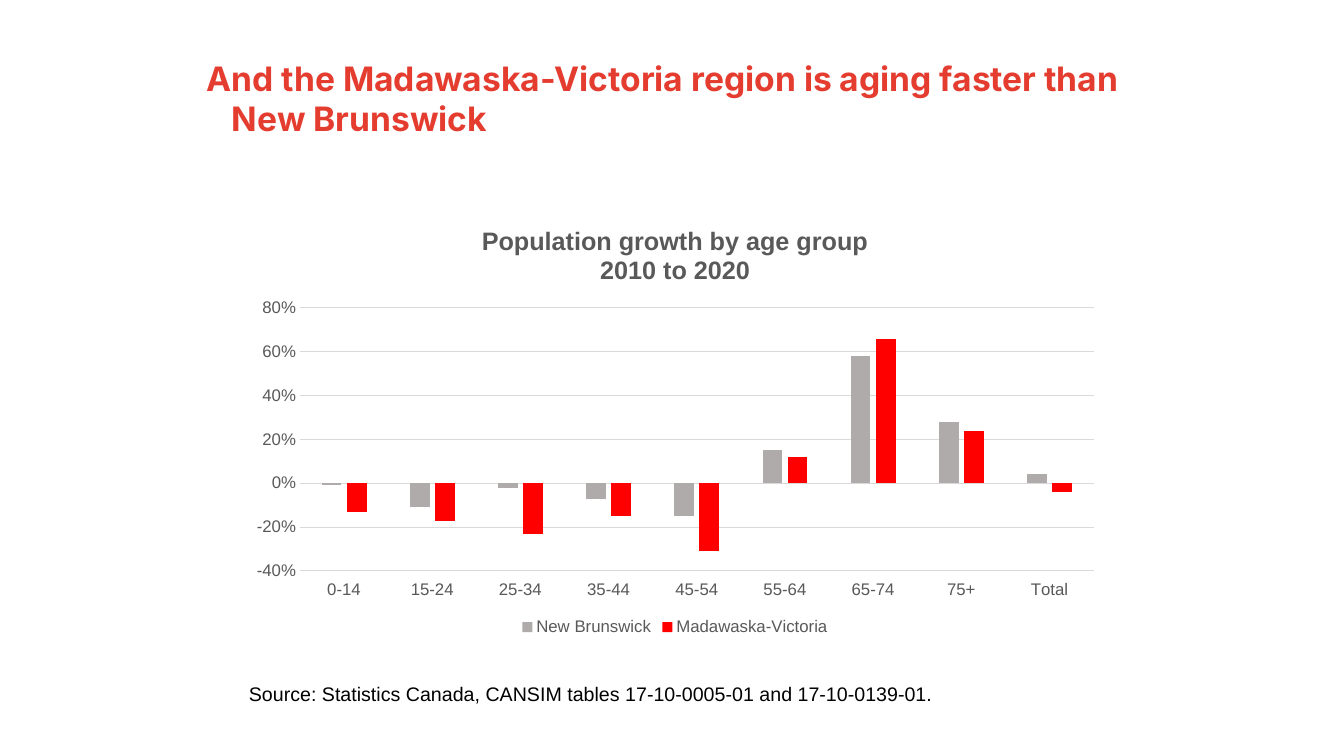
"""Build the slide comparing population growth by age group."""
from lxml import etree
from pptx import Presentation
from pptx.chart.data import CategoryChartData
from pptx.dml.color import RGBColor
from pptx.enum import chart as charts, text
from pptx.oxml import ns
from pptx.util import Inches, Pt

HEADING = "And the Madawaska-Victoria region is aging faster than New Brunswick"
SOURCE = "Source: Statistics Canada, CANSIM tables 17-10-0005-01 and 17-10-0139-01."
CHART_TITLE = "Population growth by age group\n2010 to 2020"
AGE_GROUPS = ["0-14", "15-24", "25-34", "35-44", "45-54", "55-64", "65-74", "75+", "Total"]
GROWTH = [
    ("New Brunswick", "AFABAB", [-0.01, -0.11, -0.02, -0.07, -0.15, 0.15, 0.58, 0.28, 0.04]),
    ("Madawaska-Victoria", "FF0000", [-0.13, -0.17, -0.23, -0.15, -0.31, 0.12, 0.66, 0.24, -0.04]),
]
PLOT_AREA = {"x": 0.07, "y": 0.23, "w": 0.91, "h": 0.61}
RED, GREY, PALE = "E43D30", "595959", "D9D9D9"


def color(value):
    return RGBColor.from_string(value)


def style(font, size, shade, name="Arial", bold=False):
    font.size, font.name, font.bold = Pt(size), name, bold
    font.color.rgb = color(shade)


def outline(line):
    line.color.rgb = color(PALE)
    line.width = Pt(0.75)


def place_plot(chart):
    plot_area = chart.element.find(".//" + ns.qn("c:plotArea"))
    layout = plot_area.find(ns.qn("c:layout"))
    if layout is None:
        layout = etree.Element(ns.qn("c:layout"))
        plot_area.insert(0, layout)
    manual = etree.SubElement(layout, ns.qn("c:manualLayout"))
    settings = {"layoutTarget": "inner", "xMode": "edge", "yMode": "edge", **PLOT_AREA}
    for tag, value in settings.items():
        etree.SubElement(manual, ns.qn("c:" + tag)).set("val", str(value))


def add_heading(page):
    title = page.shapes.title
    title.left, title.top = Inches(1.7), Inches(0.52)
    title.width, title.height = Inches(9.71), Inches(1.55)
    frame = title.text_frame
    frame.text = HEADING
    frame.word_wrap = True
    frame.auto_size = text.MSO_AUTO_SIZE.NONE
    frame.vertical_anchor = text.MSO_ANCHOR.TOP
    para = frame.paragraphs[0]
    para.alignment = text.PP_ALIGN.LEFT
    properties = para._p.get_or_add_pPr()
    properties.set("marL", str(Inches(0.5)))
    properties.set("indent", str(Inches(-0.25)))
    style(para.runs[0].font, 24, RED, "Inter", True)


def add_source(page):
    box = page.shapes.add_textbox(Inches(2.37), Inches(6.72), Inches(9.36), Inches(0.34))
    box.text_frame.word_wrap = True
    box.text_frame.text = SOURCE
    style(box.text_frame.paragraphs[0].runs[0].font, 14, "000000")


def add_growth_chart(page):
    data = CategoryChartData(number_format="0%")
    data.categories = AGE_GROUPS
    for name, _, values in GROWTH:
        data.add_series(name, values)
    chart = page.shapes.add_chart(
        charts.XL_CHART_TYPE.COLUMN_CLUSTERED,
        Inches(2.37), Inches(2.07), Inches(8.65), Inches(4.28), data).chart
    style(chart.font, 12, GREY)

    chart.has_title = True
    chart.chart_title.include_in_layout = False
    chart.chart_title.text_frame.text = CHART_TITLE
    for para in chart.chart_title.text_frame.paragraphs:
        style(para.runs[0].font, 18, GREY, bold=True)

    chart.has_legend = True
    chart.legend.position = charts.XL_LEGEND_POSITION.BOTTOM
    chart.legend.include_in_layout = False
    style(chart.legend.font, 12, GREY)

    for axis in (chart.category_axis, chart.value_axis):
        axis.major_tick_mark = axis.minor_tick_mark = charts.XL_TICK_MARK.NONE
        style(axis.tick_labels.font, 12, GREY)
    chart.category_axis.tick_label_position = charts.XL_TICK_LABEL_POSITION.LOW
    outline(chart.category_axis.format.line)

    scale = chart.value_axis
    scale.minimum_scale, scale.maximum_scale, scale.major_unit = -0.4, 0.8, 0.2
    scale.tick_labels.number_format = "0%"
    scale.tick_labels.number_format_is_linked = False
    scale.format.line.fill.background()
    outline(scale.major_gridlines.format.line)

    plot = chart.plots[0]
    plot.gap_width, plot.overlap, plot.vary_by_categories = 219, -27, False
    for series, (_, shade, _) in zip(plot.series, GROWTH):
        series.invert_if_negative = False
        series.format.fill.solid()
        series.format.fill.fore_color.rgb = color(shade)
    place_plot(chart)


def main():
    deck = Presentation()
    deck.slide_width, deck.slide_height = Inches(13.33), Inches(7.5)
    page = deck.slides.add_slide(deck.slide_layouts[5])
    add_heading(page)
    add_source(page)
    add_growth_chart(page)
    deck.save("out.pptx")


if __name__ == "__main__":
    main()
